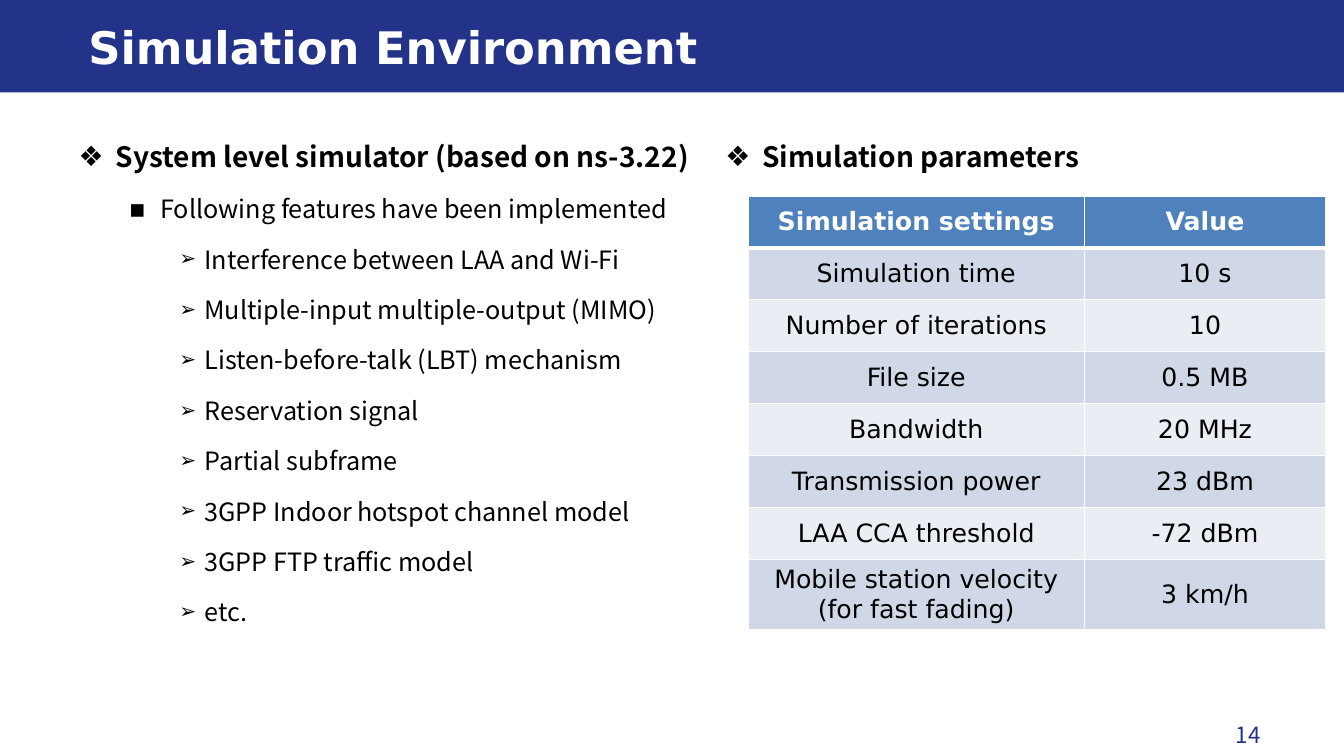
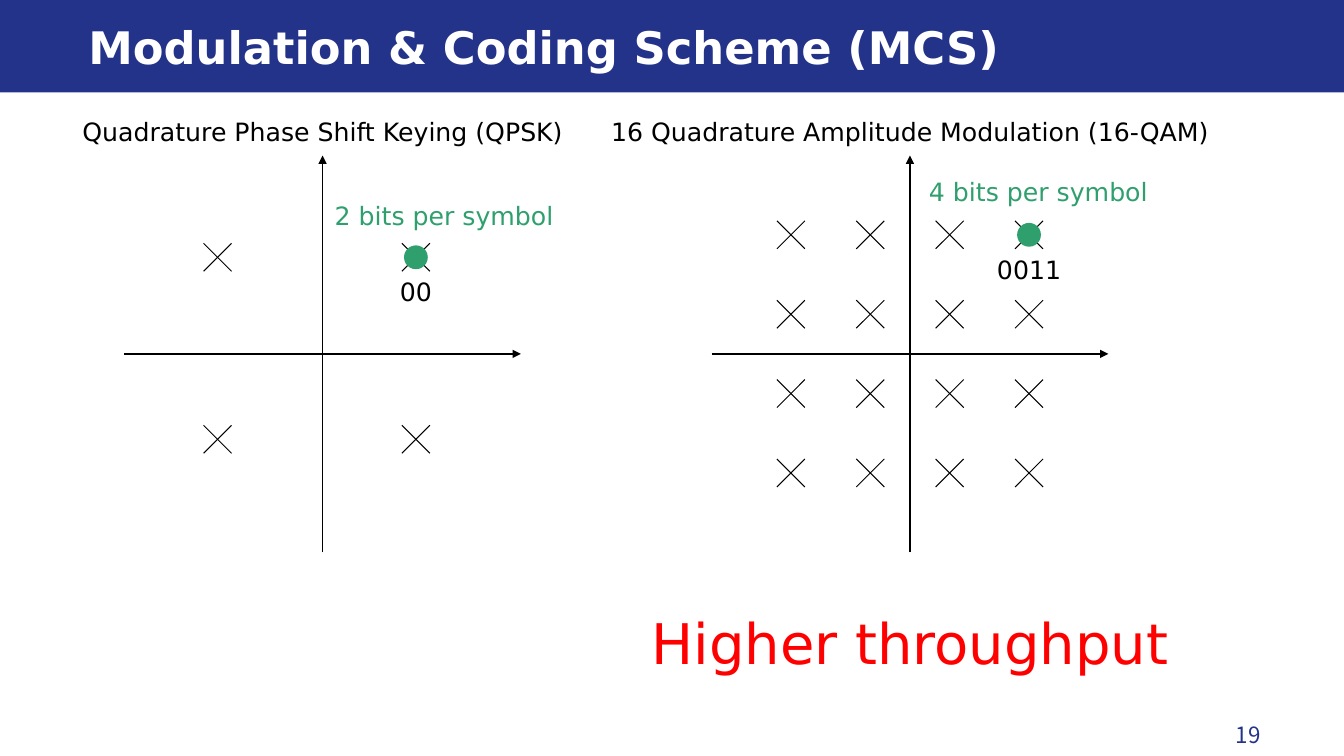
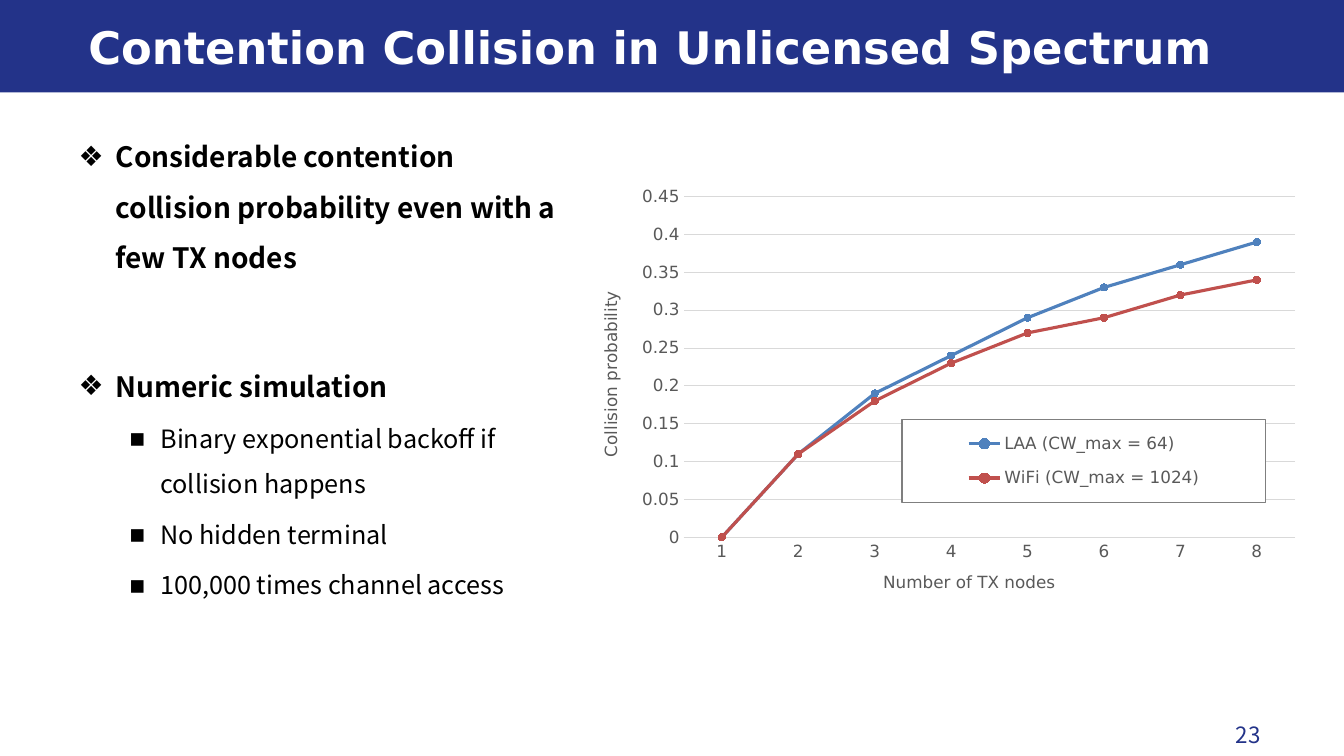
from pptx import Presentation
from pptx.chart.data import CategoryChartData
from pptx.dml.color import RGBColor
from pptx.enum.chart import XL_CHART_TYPE, XL_LEGEND_POSITION, XL_MARKER_STYLE, XL_TICK_MARK
from pptx.enum.shapes import MSO_CONNECTOR, MSO_SHAPE
from pptx.enum.text import MSO_ANCHOR, PP_ALIGN
from pptx.oxml import parse_xml
from pptx.oxml.ns import nsdecls, qn
from pptx.util import Pt

LEFT, CENTER = PP_ALIGN.LEFT, PP_ALIGN.CENTER
TOP, MIDDLE = MSO_ANCHOR.TOP, MSO_ANCHOR.MIDDLE
RECT, OVAL = MSO_SHAPE.RECTANGLE, MSO_SHAPE.OVAL
STRAIGHT = MSO_CONNECTOR.STRAIGHT
LINES = XL_CHART_TYPE.LINE_MARKERS
CORNER = XL_LEGEND_POSITION.CORNER
CIRCLE = XL_MARKER_STYLE.CIRCLE
NO_TICK = XL_TICK_MARK.NONE

SANS, NOTO = "DejaVu Sans", "Noto Sans CJK KR"
HEX = {
    "navy": "233389", "white": "FFFFFF", "black": "000000", "green": "2FA06D",
    "red": "FF0000", "blue": "4F81BD", "brick": "C0504D", "dark": "D0D8E8",
    "pale": "E9EDF4", "gray": "595959", "grid": "D9D9D9", "edge": "7F7F7F",
}
RGB = {name: RGBColor.from_string(code) for name, code in HEX.items()}

# Per level: bullet, its size in %, indent, hang, text size, bold, line pitch, space before
LEVELS = [
    ("❖", 100, 26.5, 26.5, 20, True, 36, 10),
    ("▪", 100, 58.5, 22.5, 18, False, 32.4, 3.6),
    ("➢", 80, 90, 18, 18, False, 32.4, 3.6),
]


def text(host, words, at=None, size=18, color="black", font=SANS, bold=False,
         align=LEFT, anchor=TOP, pitch=None):
    """Write words into a cell, or into a new box if at is given.

    Words are a string, or a list of (level, string, extra space) bullets.
    """
    if at:
        frame = host.shapes.add_textbox(*map(Pt, at)).text_frame
        frame.word_wrap = True
        frame.vertical_anchor = anchor
    else:
        frame = host.text_frame
        host.vertical_anchor = anchor
    items = [(None, words, 0)] if isinstance(words, str) else words
    for i, (level, line, extra) in enumerate(items):
        para = frame.paragraphs[0] if i == 0 else frame.add_paragraph()
        para.text = line
        para.alignment = align
        if level is not None:
            mark, scale, indent, hang, size, bold, pitch, gap = LEVELS[level]
            para.space_before = Pt(gap + extra if i else 0)
        if pitch:
            para.line_spacing = Pt(pitch)
        if level is not None:
            props = para._p.get_or_add_pPr()
            props.set("marL", str(Pt(indent)))
            props.set("indent", str(-Pt(hang)))
            for tag in (f'buSzPct {nsdecls("a")} val="{scale * 1000}"',
                        f'buFont {nsdecls("a")} typeface="{SANS}"',
                        f'buChar {nsdecls("a")} char="{mark}"'):
                props.append(parse_xml(f"<a:{tag}/>"))
        for run in para.runs:
            run.font.size, run.font.bold, run.font.name = Pt(size), bold, font
            run.font.color.rgb = RGB[color]


def line(slide, ends, width, arrow=False):
    link = slide.shapes.add_connector(STRAIGHT, *map(Pt, ends))
    link.line.width = Pt(width)
    link.line.color.rgb = RGB["black"]
    stroke = link.element.xpath(".//a:ln")[0]
    if arrow:
        stroke.append(parse_xml(f'<a:tailEnd {nsdecls("a")} type="triangle"/>'))
    stroke.addnext(parse_xml(f'<a:effectLst {nsdecls("a")}/>'))


deck = Presentation()
deck.slide_width, deck.slide_height = Pt(960), Pt(540)

# Shared band, title and page number
slides = []
for title, page in [
    ("Simulation Environment", "14"),
    ("Modulation & Coding Scheme (MCS)", "19"),
    ("Contention Collision in Unlicensed Spectrum", "23"),
]:
    slide = deck.slides.add_slide(deck.slide_layouts[6])
    band = slide.shapes.add_shape(RECT, 0, 0, Pt(960), Pt(66))
    band.shadow.inherit = False
    band.fill.solid()
    band.fill.fore_color.rgb = RGB["navy"]
    band.line.fill.background()
    text(slide, title, at=(56, 10, 844, 46), size=32, color="white", bold=True, anchor=MIDDLE)
    text(slide, page, at=(847.5, 511, 88, 28), size=16, color="navy", font=NOTO,
         align=CENTER, pitch=20)
    slides.append(slide)
setup, coding, clash = slides

# Simulation environment
text(setup, [
    (0, "System level simulator (based on ns-3.22)", 0),
    (1, "Following features have been implemented", 0),
    *[(2, item, 0) for item in (
        "Interference between LAA and Wi-Fi",
        "Multiple-input multiple-output (MIMO)",
        "Listen-before-talk (LBT) mechanism",
        "Reservation signal",
        "Partial subframe",
        "3GPP Indoor hotspot channel model",
        "3GPP FTP traffic model",
        "etc.",
    )],
], at=(49, 84.3, 459, 418), font=NOTO)
text(setup, [(0, "Simulation parameters", 0)], at=(511, 84.3, 459, 418), font=NOTO)

rows = [
    ("Simulation settings", "Value"),
    ("Simulation time", "10 s"),
    ("Number of iterations", "10"),
    ("File size", "0.5 MB"),
    ("Bandwidth", "20 MHz"),
    ("Transmission power", "23 dBm"),
    ("LAA CCA threshold", "-72 dBm"),
    ("Mobile station velocity\v(for fast fading)", "3 km/h"),
]
table = setup.shapes.add_table(len(rows), 2, Pt(534.5), Pt(140), Pt(412.5), Pt(296.8)).table
table.columns[0].width, table.columns[1].width = Pt(240), Pt(172.5)
for r, row in enumerate(rows):
    table.rows[r].height = Pt(37.1)
    head = r == 0
    for c, words in enumerate(row):
        cell = table.cell(r, c)
        text(cell, words, color="white" if head else "black", bold=head,
             align=CENTER, anchor=MIDDLE)
        props = cell._tc.get_or_add_tcPr()
        for side in "LRTB":
            thick = 3 if (r, side) in [(0, "B"), (1, "T")] else 1
            props.append(parse_xml(
                f'<a:ln{side} {nsdecls("a")} w="{Pt(thick)}"><a:solidFill>'
                f'<a:srgbClr val="{HEX["white"]}"/></a:solidFill></a:ln{side}>'))
        cell.fill.solid()
        cell.fill.fore_color.rgb = RGB["blue" if head else "dark" if r % 2 else "pale"]

# Modulation: two constellations
MID, HALF, ARM, DOT, STEP = 252.8, 141.7, 10, 17, 56.7
grid = [(i - 1.5) * STEP for i in range(4)]
for name, head, mid, xs, ys, code, bits, spot in [
    ("Quadrature Phase Shift Keying (QPSK)", (32, 397), 230.4, (-75, 66.7), (-69, 61),
     "00", "2 bits per symbol", (232, 139.5)),
    ("16 Quadrature Amplitude Modulation (16-QAM)", (423, 454), 650, grid, grid,
     "0011", "4 bits per symbol", (656.5, 122.5)),
]:
    left, width = head
    text(coding, name, at=(left, 79.5, width, 29), align=CENTER)
    line(coding, (mid - HALF, MID, mid + HALF, MID), 1, arrow=True)
    line(coding, (mid, MID + HALF, mid, MID - HALF), 1, arrow=True)
    for dx in xs:
        for dy in ys:
            x, y = mid + dx, MID + dy
            for rise in (ARM, -ARM):
                line(coding, (x - ARM, y - rise, x + ARM, y + rise), 0.75)
    x, y = mid + xs[-1], MID + ys[0]
    dot = coding.shapes.add_shape(OVAL, Pt(x - DOT / 2), Pt(y - DOT / 2), Pt(DOT), Pt(DOT))
    dot.shadow.inherit = False
    dot.fill.solid()
    dot.fill.fore_color.rgb = RGB["green"]
    dot.line.fill.background()
    text(coding, code, at=(x - 31, y + ARM, 62, 29), align=CENTER)
    text(coding, bits, at=(*spot, 174, 29), color="green")
text(coding, "Higher throughput", at=(455.5, 431, 389, 55), size=40, color="red", align=CENTER)

# Contention collision
text(clash, [
    (0, "Considerable contention collision probability even with a few TX nodes", 0),
    (0, "Numeric simulation", 46),
    (1, "Binary exponential backoff if collision happens", 0),
    (1, "No hidden terminal", 0),
    (1, "100,000 times channel access", 0),
], at=(49, 84.3, 364, 418), font=NOTO)

data = CategoryChartData()
data.categories = [str(n) for n in range(1, 9)]
data.add_series("LAA (CW_max = 64)", (0, 0.11, 0.19, 0.24, 0.29, 0.33, 0.36, 0.39))
data.add_series("WiFi (CW_max = 1024)", (0, 0.11, 0.18, 0.23, 0.27, 0.29, 0.32, 0.34))
chart = clash.shapes.add_chart(LINES, Pt(415.5), Pt(128), Pt(520), Pt(312), data).chart
chart.has_title = False
chart.font.size, chart.font.name = Pt(12), SANS
chart.font.color.rgb = RGB["gray"]
chart.plots[0].vary_by_categories = False
for series, color in zip(chart.plots[0].series, ("blue", "brick")):
    series.smooth = False
    series.format.line.width = Pt(2.25)
    series.format.line.color.rgb = RGB[color]
    series.marker.style, series.marker.size = CIRCLE, 5
    series.marker.format.fill.solid()
    series.marker.format.fill.fore_color.rgb = RGB[color]
    series.marker.format.line.color.rgb = RGB[color]

across, up = chart.category_axis, chart.value_axis
for axis, name in [(across, "Number of TX nodes"), (up, "Collision probability")]:
    axis.major_tick_mark = axis.minor_tick_mark = NO_TICK
    frame = axis.axis_title.text_frame
    frame.text = name
    font = frame.paragraphs[0].runs[0].font
    font.size, font.bold, font.name = Pt(12), False, SANS
    font.color.rgb = RGB["gray"]
across.format.line.color.rgb = RGB["grid"]
across.format.line.width = Pt(0.75)
up.format.line.fill.background()
up.minimum_scale, up.maximum_scale, up.major_unit = 0, 0.45, 0.05
up.major_gridlines.format.line.color.rgb = RGB["grid"]
up.major_gridlines.format.line.width = Pt(0.75)
body = chart.element.xpath(".//c:valAx/c:title//a:bodyPr")[0]
body.set("rot", "-5400000")
body.set("vert", "horz")

chart.has_legend = True
legend = chart.legend
legend.position = CORNER
legend.include_in_layout = True
legend.font.size, legend.font.name = Pt(12), SANS
legend.font.color.rgb = RGB["gray"]
chart.element.xpath(".//c:legend/c:overlay")[0].addnext(parse_xml(
    f'<c:spPr {nsdecls("c", "a")}><a:solidFill><a:srgbClr val="{HEX["white"]}"/></a:solidFill>'
    f'<a:ln w="{Pt(0.75)}"><a:solidFill><a:srgbClr val="{HEX["edge"]}"/></a:solidFill></a:ln>'
    '</c:spPr>'))

# Fixed places inside the chart, as shares of its size
for query, index, place in [
    ("c:plotArea", 0, {"x": 0.14, "y": 0.04, "w": 0.84, "h": 0.78}),
    ("c:legend", 1, {"x": 0.44, "y": 0.55, "w": 0.5, "h": 0.19}),
    ("c:catAx/c:title", 1, {"x": 0.41, "y": 0.89}),
    ("c:valAx/c:title", 1, {"x": 0.02, "y": 0.25}),
]:
    part = chart.element.xpath(".//" + query)[0]
    for old in part.findall(qn("c:layout")):
        part.remove(old)
    inner = '<c:layoutTarget val="inner"/>' if query == "c:plotArea" else ""
    modes = "".join(f'<c:{k}Mode val="edge"/>' for k in "xy")
    sizes = "".join(f'<c:{k} val="{v}"/>' for k, v in place.items())
    part.insert(index, parse_xml(
        f'<c:layout {nsdecls("c")}><c:manualLayout>{inner}{modes}{sizes}'
        '</c:manualLayout></c:layout>'))

deck.save("out.pptx")
